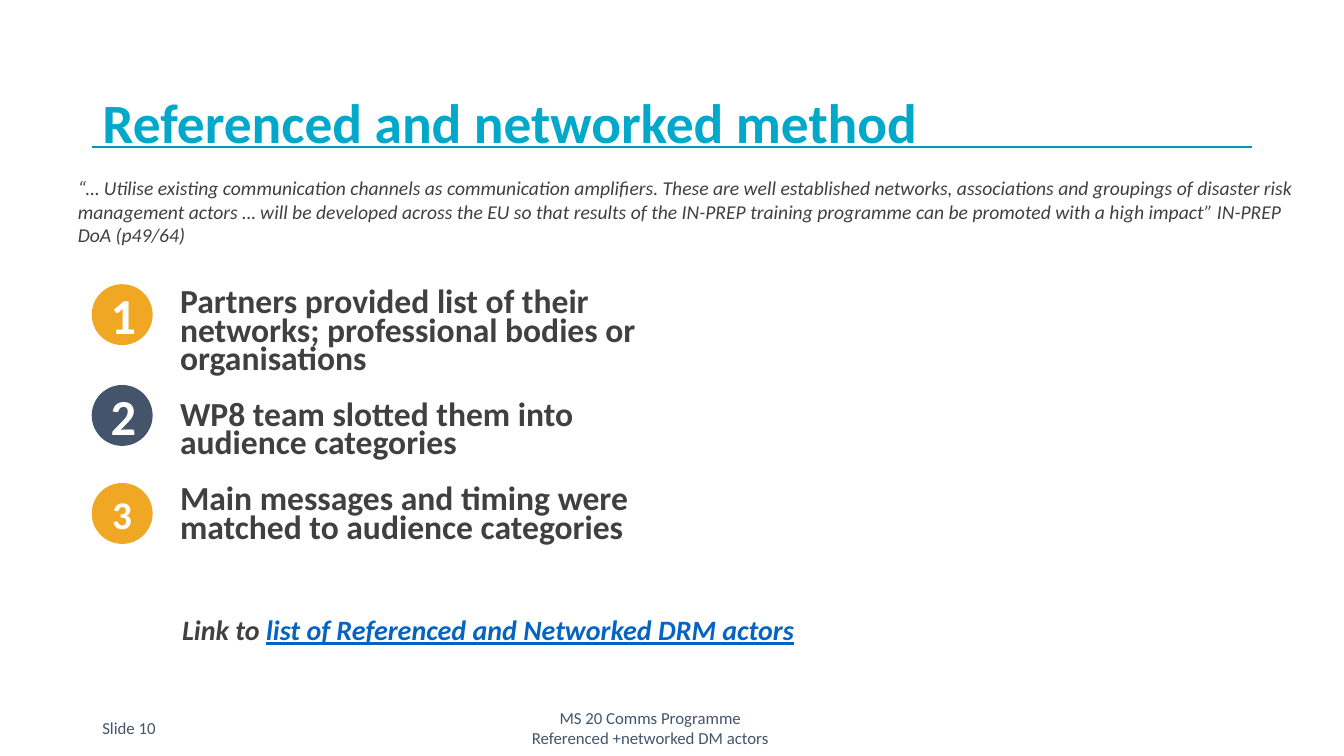
import pptx
import pptx.util
import pptx.dml.color
import pptx.enum.shapes
import pptx.enum.text
import pptx.oxml.ns
import lxml.etree

Pt = pptx.util.Pt
ALIGN = pptx.enum.text.PP_ALIGN
ANCHOR = pptx.enum.text.MSO_ANCHOR
COLORS = {
    "heading": "00A8CA",
    "rule": "0098B6",
    "body": "404040",
    "slate": "44546A",
    "amber": "F0A824",
    "link": "0563C1",
    "white": "FFFFFF",
}


class SlideBuilder:
    font = "Calibri"

    def __init__(self, presentation):
        title_only = presentation.slide_layouts[5]
        self.slide = presentation.slides.add_slide(title_only)

    def color(self, name):
        return pptx.dml.color.RGBColor.from_string(COLORS[name])

    def format_run(self, run, size, color, bold=False, italic=False):
        run.font.name = self.font
        run.font.size = Pt(size)
        run.font.bold = bold
        run.font.italic = italic
        run.font.color.rgb = self.color(color)

    def fill_text(self, frame, lines, size, color, align=ALIGN.LEFT, anchor=ANCHOR.MIDDLE,
                  spacing=1.0, gap=0, bold=False, italic=False):
        frame.word_wrap = True
        frame.auto_size = pptx.enum.text.MSO_AUTO_SIZE.NONE
        frame.vertical_anchor = anchor
        frame.text = "\n".join(lines)
        for index, paragraph in enumerate(frame.paragraphs):
            paragraph.alignment = align
            paragraph.line_spacing = spacing
            if index and gap:
                paragraph.space_before = Pt(gap)
            for run in paragraph.runs:
                self.format_run(run, size, color, bold, italic)

    def title(self, text, left, top, width, height, size):
        heading = self.slide.shapes.title
        heading.left, heading.top = Pt(left), Pt(top)
        heading.width, heading.height = Pt(width), Pt(height)
        self.fill_text(heading.text_frame, [text], size, "heading", spacing=0.9, bold=True)

    def text(self, lines, left, top, width, height, size, color, **style):
        box = self.slide.shapes.add_textbox(Pt(left), Pt(top), Pt(width), Pt(height))
        self.fill_text(box.text_frame, lines, size, color, **style)
        return box.text_frame

    def rule(self, left, right, y):
        line = self.slide.shapes.add_connector(
            pptx.enum.shapes.MSO_CONNECTOR.STRAIGHT, Pt(left), Pt(y), Pt(right), Pt(y))
        line.line.color.rgb = self.color("rule")
        line.line.width = Pt(1)
        properties = line._element.spPr
        lxml.etree.SubElement(properties, pptx.oxml.ns.qn("a:effectLst"))

    def badge(self, number, left, top, diameter, fill, size):
        circle = self.slide.shapes.add_shape(
            pptx.enum.shapes.MSO_SHAPE.OVAL, Pt(left), Pt(top), Pt(diameter), Pt(diameter))
        circle.shadow.inherit = False
        circle.fill.solid()
        circle.fill.fore_color.rgb = self.color(fill)
        circle.line.fill.background()
        self.fill_text(circle.text_frame, [number], size, "white", align=ALIGN.CENTER, bold=True)


def main():
    presentation = pptx.Presentation()
    presentation.slide_width, presentation.slide_height = Pt(960), Pt(540)
    page = SlideBuilder(presentation)

    # Heading and its rule
    page.rule(66, 894, 105)
    page.title("Referenced and networked method", 66, 52.5, 828, 74, 39.6)

    # Quotation
    page.text(
        ["“… Utilise existing communication channels as communication amplifiers. "
         "These are well established networks, associations and groupings of disaster risk "
         "management actors … will be developed across the EU so that results of the IN-PREP "
         "training programme can be promoted with a high impact” IN-PREP DoA (p49/64)"],
        48.5, 107.5, 889, 87, 14, "body", italic=True)

    # Numbered steps
    page.text(
        ["Partners provided list of their networks; professional bodies or organisations",
         "WP8 team slotted them into audience categories",
         "Main messages and timing were matched to audience categories"],
        121.5, 204.5, 366.5, 218, 24, "body",
        anchor=ANCHOR.TOP, spacing=0.7, gap=20, bold=True)
    for number, top, fill, size in [("1", 203, "amber", 36), ("2", 275, "slate", 36),
                                    ("3", 345, "amber", 28)]:
        page.badge(number, 65.5, top, 43.5, fill, size)

    # Link to the list of actors
    link_line = page.text(["Link to "], 123, 434, 500, 32, 20, "body",
                          anchor=ANCHOR.TOP, bold=True, italic=True)
    link = link_line.paragraphs[0].add_run()
    link.text = "list of Referenced and Networked DRM actors"
    page.format_run(link, 20, "link", bold=True, italic=True)
    link.font.underline = True

    # Footer
    page.text(["MS 20 Comms Programme", "Referenced +networked DM actors"],
              302.5, 505.5, 324, 29, 12, "slate", align=ALIGN.CENTER)
    page.text(["Slide 10"], 66, 505.5, 58, 29, 12, "slate")

    presentation.save("out.pptx")


if __name__ == "__main__":
    main()
